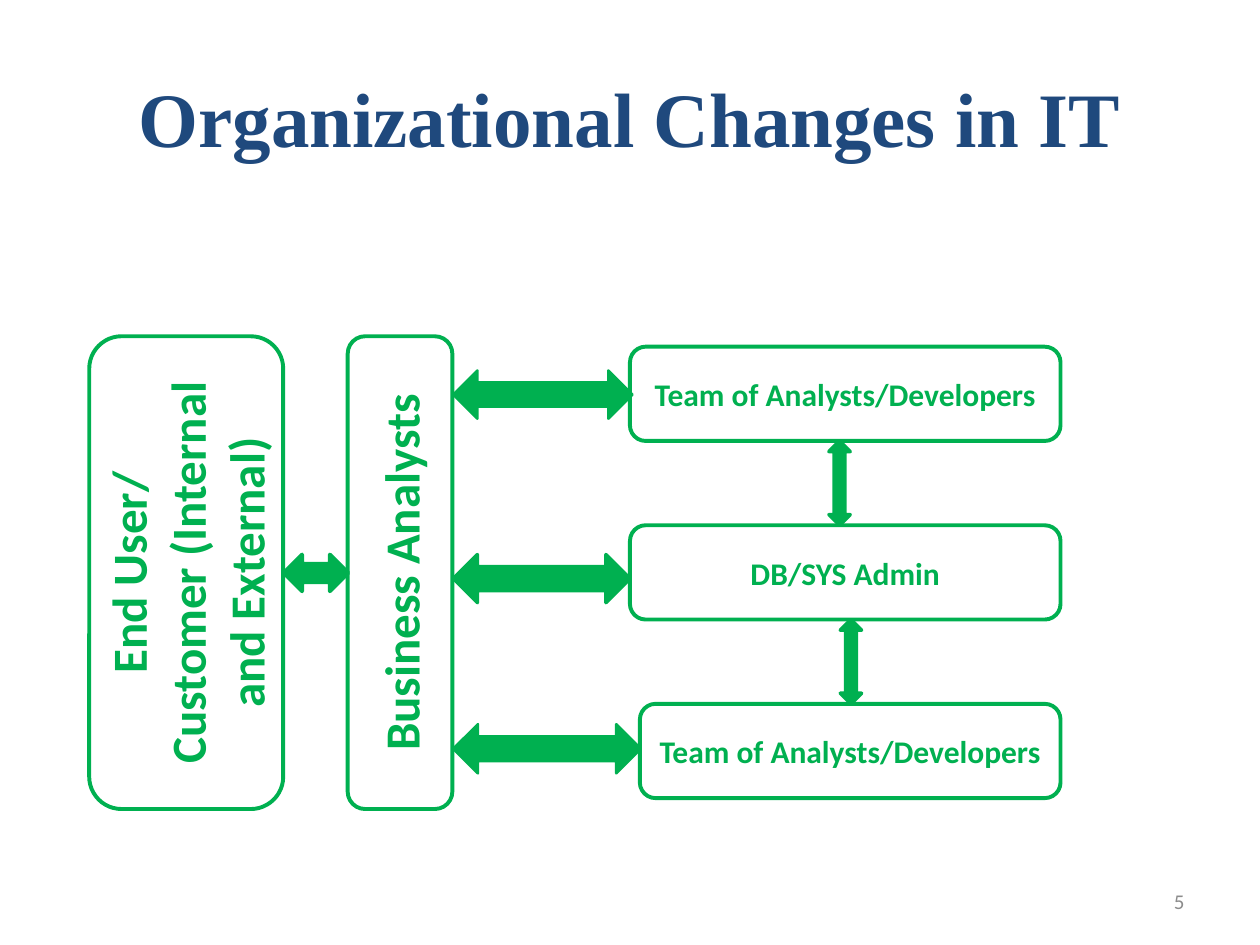
from pptx import Presentation
from pptx.dml.color import RGBColor
from pptx.enum.shapes import MSO_SHAPE as Shape
from pptx.enum.text import MSO_ANCHOR as Anchor, PP_ALIGN as Align
from pptx.util import Cm, Pt

GREEN = "00B050"
TITLE = dict(name="Times New Roman", size=Pt(44), bold=True)
SIDE = dict(name="Calibri", size=Pt(28), bold=True)
TEAM = dict(name="Calibri", size=Pt(18), bold=True)
NUMBER = dict(name="Calibri", size=Pt(12))


def paint(color, code):
    color.rgb = RGBColor.from_string(code)


def write(shape, text, form, code, align=Align.CENTER):
    frame = shape.text_frame
    frame.word_wrap = True
    frame.vertical_anchor = Anchor.MIDDLE
    para = frame.paragraphs[0]
    para.text = text
    para.alignment = align
    for run in para.runs:
        for key, value in form.items():
            setattr(run.font, key, value)
        paint(run.font.color, code)


def add_label(slide, place, text, form, code, align):
    box = slide.shapes.add_textbox(*map(Cm, place))
    write(box, text, form, code, align)


def add_form(slide, kind, place, width):
    shape = slide.shapes.add_shape(kind, *map(Cm, place))
    shape.shadow.inherit = False
    shape.line.width = Pt(width)
    paint(shape.line.color, GREEN)
    return shape


def add_box(slide, place, text, form, upright=False):
    """Draw an outlined box; upright text reads from bottom to top."""
    box = add_form(slide, Shape.ROUNDED_RECTANGLE, place, 2.25)
    box.fill.background()
    write(box, text, form, GREEN)
    if upright:
        box.element.txBody.bodyPr.set("vert", "vert270")


def add_arrow(slide, kind, place, width):
    arrow = add_form(slide, kind, place, width)
    arrow.fill.solid()
    paint(arrow.fill.fore_color, GREEN)


def main():
    deck = Presentation()
    deck.slide_width, deck.slide_height = Cm(25.4), Cm(19.05)
    slide = deck.slides.add_slide(deck.slide_layouts[6])

    add_label(slide, (1.27, 0.76, 22.86, 3.18), "Organizational Changes in IT",
              TITLE, "1F497D", Align.CENTER)
    add_label(slide, (18.2, 17.66, 5.93, 1.01), "5",
              NUMBER, "8C8C8C", Align.RIGHT)

    add_box(slide, (1.8, 6.78, 3.91, 9.53),
            "End User/\vCustomer (Internal and External)", SIDE, True)
    add_box(slide, (7.01, 6.78, 2.11, 9.53), "Business Analysts", SIDE, True)

    top, high, step, right = 6.99, 1.9, 3.6, 21.38
    teams = [(12.7, "Team of Analysts/Developers"),
             (12.7, "DB/SYS Admin"),
             (12.9, "Team of Analysts/Developers")]
    for row, (left, text) in enumerate(teams):
        place = (left, top + row * step, right - left, high)
        add_box(slide, place, text, TEAM)

    for row, left in enumerate((16.71, 16.94)):
        place = (left, top + row * step + high, 0.43, step - high)
        add_arrow(slide, Shape.UP_DOWN_ARROW, place, 2)

    links = [((5.72, 11.18, 1.3, 0.74), 2.25),
             ((9.14, 7.47, 3.61, 0.97), 1.5),
             ((9.14, 11.18, 3.56, 0.97), 2),
             ((9.14, 14.6, 3.78, 0.99), 1.5)]
    for place, width in links:
        add_arrow(slide, Shape.LEFT_RIGHT_ARROW, place, width)

    deck.save("out.pptx")


if __name__ == "__main__":
    main()
